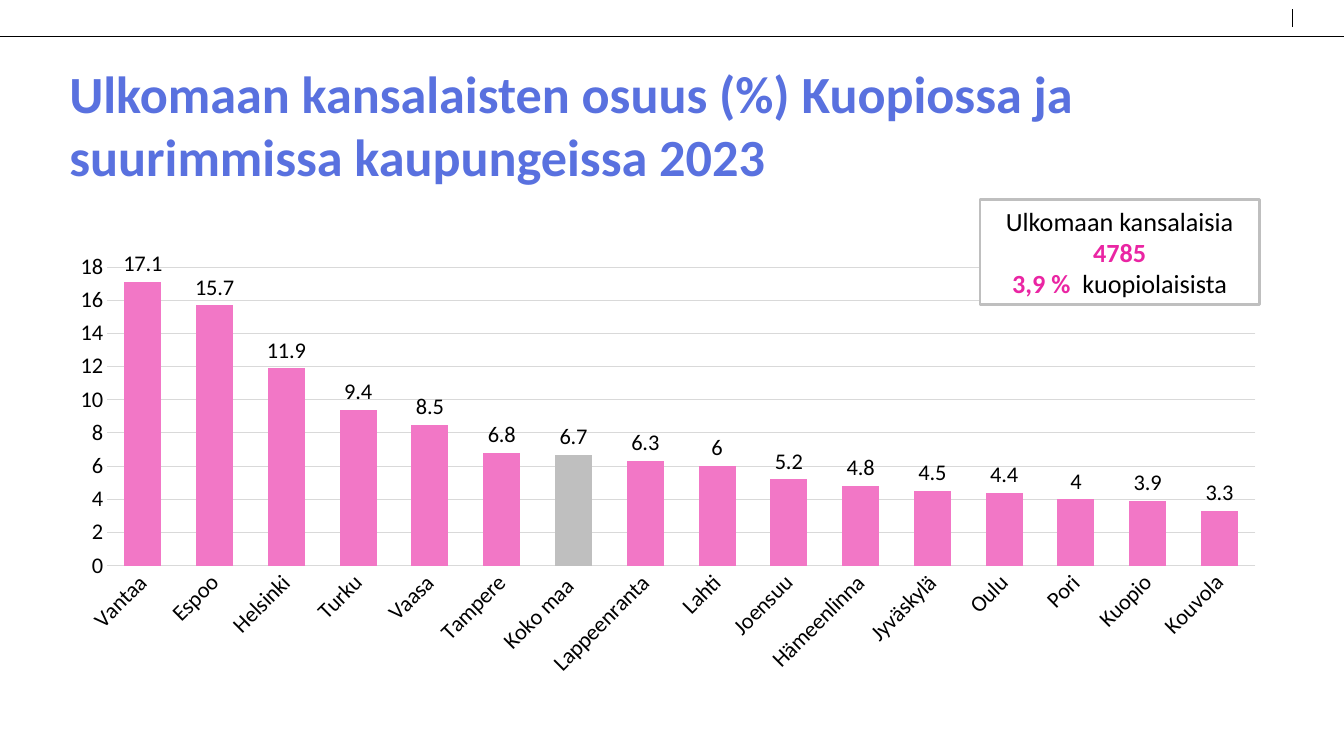
from dataclasses import dataclass

from lxml import etree
from pptx import Presentation
from pptx.chart.data import CategoryChartData
from pptx.dml.color import RGBColor
from pptx.enum.chart import XL_CHART_TYPE, XL_LABEL_POSITION, XL_TICK_MARK
from pptx.enum.shapes import MSO_CONNECTOR, MSO_SHAPE
from pptx.enum.text import MSO_ANCHOR, PP_ALIGN
from pptx.oxml import parse_xml
from pptx.oxml.ns import nsdecls, qn
from pptx.util import Inches, Pt

COLUMNS = XL_CHART_TYPE.COLUMN_CLUSTERED
OUTSIDE = XL_LABEL_POSITION.OUTSIDE_END
NO_TICK = XL_TICK_MARK.NONE
STRAIGHT = MSO_CONNECTOR.STRAIGHT
RECTANGLE = MSO_SHAPE.RECTANGLE
BOTTOM, MIDDLE = MSO_ANCHOR.BOTTOM, MSO_ANCHOR.MIDDLE
LEFT, CENTER = PP_ALIGN.LEFT, PP_ALIGN.CENTER


@dataclass(frozen=True)
class Theme:
    font: str = "Calibri"
    black: str = "000000"
    white: str = "FFFFFF"
    blue: str = "5971DF"
    pink: str = "F277C6"
    magenta: str = "EA25A3"
    gray: str = "BFBFBF"
    grid: str = "D9D9D9"
    title_size: float = 37.3
    note_size: float = 18.7
    chart_size: float = 16


SHARES = {
    "Vantaa": 17.1, "Espoo": 15.7, "Helsinki": 11.9, "Turku": 9.4,
    "Vaasa": 8.5, "Tampere": 6.8, "Koko maa ": 6.7, "Lappeenranta": 6.3,
    "Lahti": 6, "Joensuu": 5.2, "Hämeenlinna": 4.8, "Jyväskylä": 4.5,
    "Oulu": 4.4, "Pori": 4, "Kuopio": 3.9, "Kouvola": 3.3,
}
WHOLE_COUNTRY = "Koko maa "
PLOT_AREA = {"x": 0.064, "y": 0.127, "w": 0.899, "h": 0.561}


class SlideBuilder:
    def __init__(self, slide, theme):
        self.slide = slide
        self.theme = theme

    def style_font(self, font, size, color, bold=False):
        font.name = self.theme.font
        font.size = Pt(size)
        font.bold = bold
        font.color.rgb = RGBColor.from_string(color)

    def style_line(self, line, color, width):
        line.color.rgb = RGBColor.from_string(color)
        line.width = Pt(width)

    def add_text(self, frame, paragraphs, size, alignment):
        """Each paragraph is a list of (text, color, bold) runs."""
        frame.word_wrap = True
        for index, runs in enumerate(paragraphs):
            paragraph = frame.add_paragraph() if index else frame.paragraphs[0]
            paragraph.alignment = alignment
            for text, color, bold in runs:
                run = paragraph.add_run()
                run.text = text
                self.style_font(run.font, size, color, bold)

    def add_rule(self, x1, y1, x2, y2):
        rule = self.slide.shapes.add_connector(
            STRAIGHT, Inches(x1), Inches(y1), Inches(x2), Inches(y2))
        self.style_line(rule.line, self.theme.black, 0.5)
        etree.SubElement(rule._element.spPr, qn("a:effectLst"))

    def add_title(self, text, left, top, width, height):
        box = self.slide.shapes.add_textbox(
            Inches(left), Inches(top), Inches(width), Inches(height))
        frame = box.text_frame
        frame.vertical_anchor = BOTTOM
        frame.margin_top = frame.margin_bottom = 0
        self.add_text(frame, [[(text, self.theme.blue, True)]],
                      self.theme.title_size, LEFT)

    def add_note(self, paragraphs, left, top, width, height):
        shape = self.slide.shapes.add_shape(
            RECTANGLE, Inches(left), Inches(top), Inches(width), Inches(height))
        shape.shadow.inherit = False
        shape.fill.solid()
        shape.fill.fore_color.rgb = RGBColor.from_string(self.theme.white)
        self.style_line(shape.line, self.theme.gray, 2)
        shape.text_frame.vertical_anchor = MIDDLE
        self.add_text(shape.text_frame, paragraphs, self.theme.note_size, CENTER)

    def add_columns(self, values, highlight, left, top, width, height):
        theme = self.theme
        data = CategoryChartData()
        data.categories = list(values)
        data.add_series("Series 1", list(values.values()))
        chart = self.slide.shapes.add_chart(
            COLUMNS, Inches(left), Inches(top), Inches(width), Inches(height),
            data).chart
        chart.has_legend = False
        chart.has_title = False
        self.style_font(chart.font, theme.chart_size, theme.black)

        # Columns and their labels
        plot = chart.plots[0]
        plot.gap_width = 94
        plot.vary_by_categories = False
        series = plot.series[0]
        country = series.points[list(values).index(highlight)]
        for part, color in ((series, theme.pink), (country, theme.gray)):
            part.format.fill.solid()
            part.format.fill.fore_color.rgb = RGBColor.from_string(color)
        labels = series.data_labels
        labels.show_value = True
        labels.position = OUTSIDE
        self.style_font(labels.font, theme.chart_size, theme.black)

        # Axes and gridlines
        category_axis, value_axis = chart.category_axis, chart.value_axis
        for axis in (category_axis, value_axis):
            axis.major_tick_mark = axis.minor_tick_mark = NO_TICK
            self.style_font(axis.tick_labels.font, theme.chart_size, theme.black)
        category_axis._element.find(
            f'{qn("c:txPr")}/{qn("a:bodyPr")}').set("rot", "-2700000")
        self.style_line(category_axis.format.line, theme.grid, 0.75)
        value_axis.format.line.fill.background()
        value_axis.minimum_scale, value_axis.maximum_scale = 0, 18
        value_axis.major_unit = 2
        self.style_line(value_axis.major_gridlines.format.line, theme.grid, 0.75)
        self.place_plot(chart)

    def place_plot(self, chart):
        modes = "".join(f'<c:{key}Mode val="edge"/>' for key in "xy")
        sizes = "".join(f'<c:{key} val="{value}"/>'
                        for key, value in PLOT_AREA.items())
        layout = parse_xml(
            f'<c:layout {nsdecls("c")}><c:manualLayout>'
            f'<c:layoutTarget val="inner"/>{modes}{sizes}'
            f'</c:manualLayout></c:layout>')
        plot_area = chart._chartSpace.chart.plotArea
        for old_layout in plot_area.findall(qn("c:layout")):
            plot_area.remove(old_layout)
        plot_area.insert(0, layout)


def main():
    presentation = Presentation()
    presentation.slide_width = Inches(13.33)
    presentation.slide_height = Inches(7.5)
    slide = presentation.slides.add_slide(presentation.slide_layouts[6])
    theme = Theme()
    builder = SlideBuilder(slide, theme)

    # Header rules
    builder.add_rule(0, 0.36, 13.33, 0.36)
    builder.add_rule(12.82, 0.27, 12.82, 0.09)

    # Title
    builder.add_title(
        "Ulkomaan kansalaisten osuus (%) Kuopiossa ja "
        "suurimmissa kaupungeissa 2023", 0.59, 0.6, 12, 1.25)

    # Shares by city
    builder.add_columns(SHARES, WHOLE_COUNTRY, 0.25, 1.98, 12.67, 5.28)

    # Key figures for Kuopio
    builder.add_note([
        [("Ulkomaan kansalaisia", theme.black, False)],
        [("4785", theme.magenta, True)],
        [("3,9 %  ", theme.magenta, True),
         ("kuopiolaisista", theme.black, False)],
    ], 9.72, 1.98, 2.77, 1.04)

    presentation.save("out.pptx")


if __name__ == "__main__":
    main()
